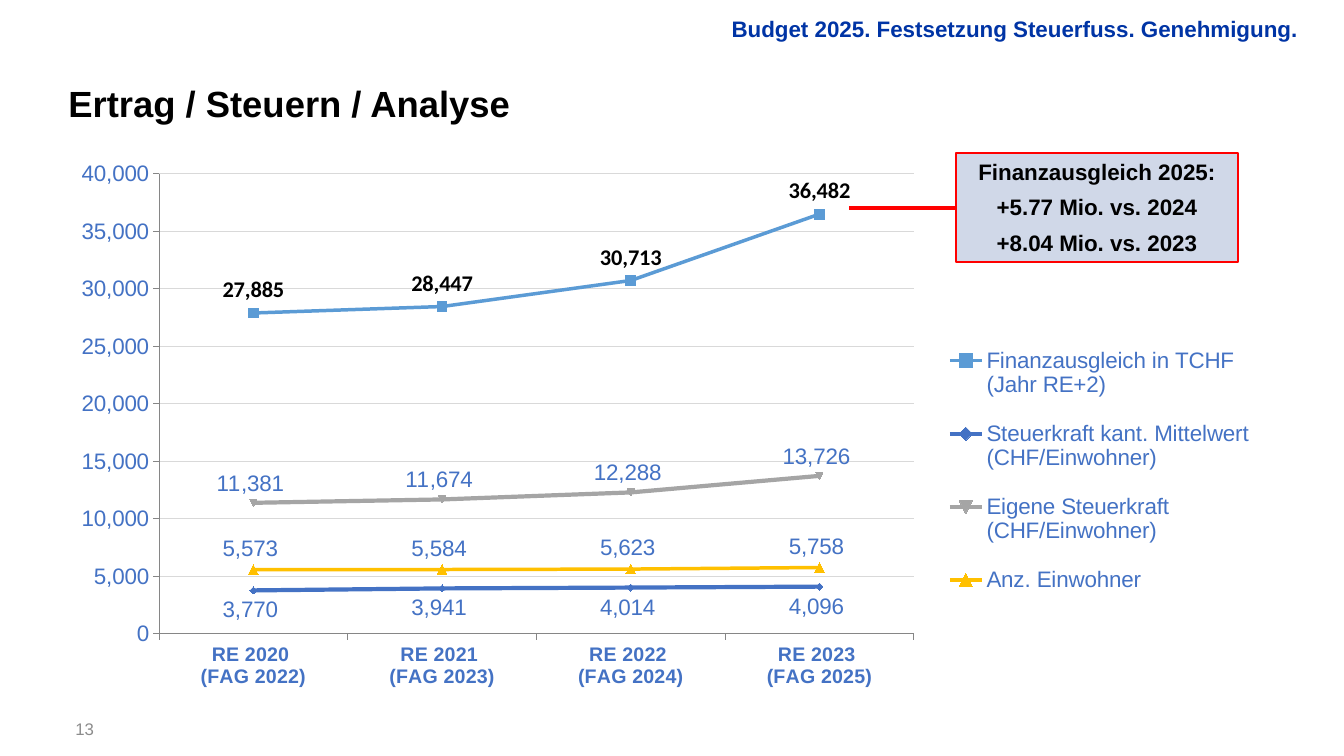
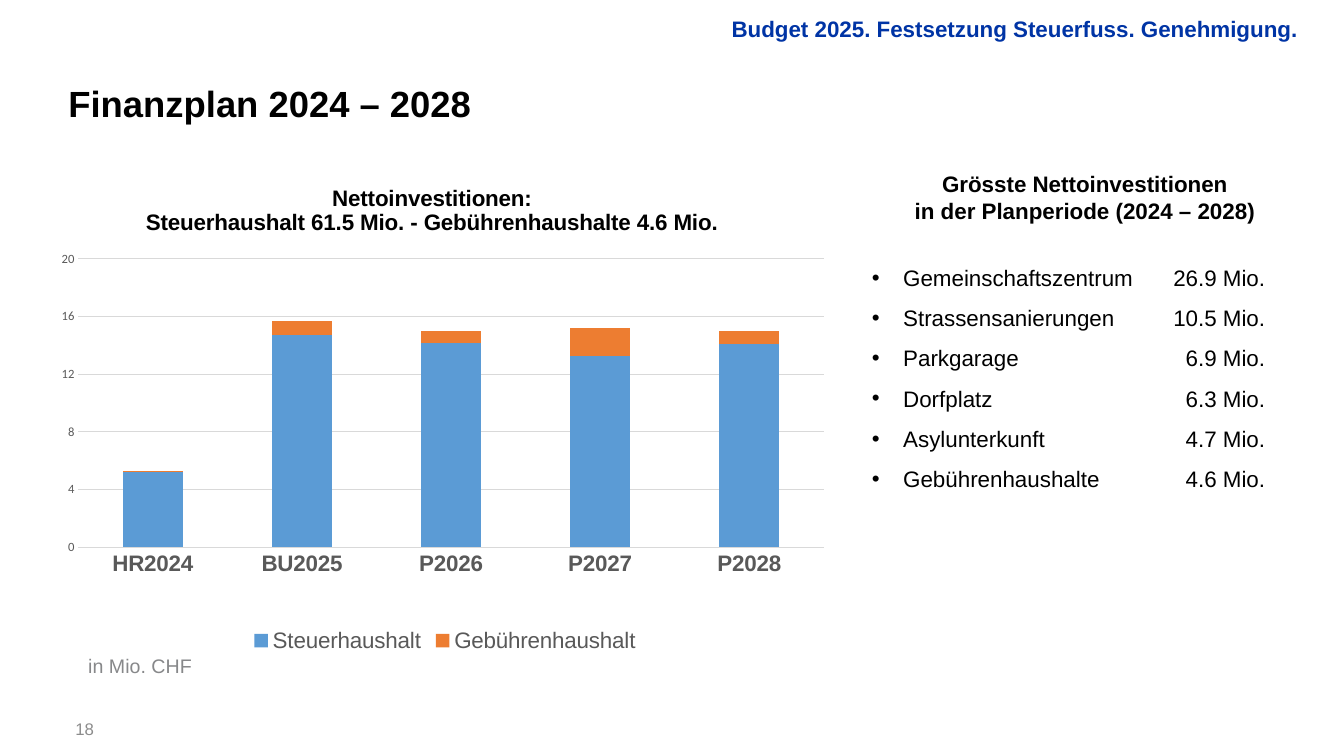
"""Build two budget slides: a tax revenue line chart and an investment plan."""
from lxml.etree import SubElement
from pptx import Presentation
from pptx.chart.data import CategoryChartData
from pptx.dml.color import RGBColor
from pptx.enum.chart import XL_CHART_TYPE, XL_LABEL_POSITION, XL_LEGEND_POSITION, XL_TICK_MARK
from pptx.enum.shapes import MSO_CONNECTOR, MSO_SHAPE
from pptx.enum.text import MSO_ANCHOR, PP_ALIGN
from pptx.oxml import parse_xml
from pptx.oxml.ns import nsdecls, qn
from pptx.util import Inches, Pt

HUES = {
    "ink": "000000", "navy": "0034A5", "foot": "8C8C8C", "note": "87888A",
    "text": "4472C4", "dark": "595959", "grid": "D9D9D9", "axis": "868686",
    "sky": "5B9BD5", "blue": "4472C4", "gray": "A5A5A5", "gold": "FFC000",
    "rust": "ED7D31", "red": "FF0000", "pale": "D0D8E8",
}
RGB = {name: RGBColor.from_string(hue) for name, hue in HUES.items()}
LEFT, RIGHT, MID = PP_ALIGN.LEFT, PP_ALIGN.RIGHT, PP_ALIGN.CENTER


def style(font, size, hue, bold=False, name="Arial"):
    for key, val in {"size": Pt(size), "bold": bold, "name": name}.items():
        setattr(font, key, val)
    font.color.rgb = RGB[hue]


def place(node, spot, box, inner=False):
    for old in node.findall(qn("c:layout")):
        node.remove(old)
    layout = parse_xml(f"<c:layout {nsdecls('c')}><c:manualLayout/></c:layout>")
    rules = [("layoutTarget", "inner")] if inner else []
    rules += [("xMode", "edge"), ("yMode", "edge"), *zip("xywh", box)]
    for tag, val in rules:
        SubElement(layout[0], qn(f"c:{tag}")).set("val", str(val))
    node.insert(spot, layout)


deck = Presentation()
deck.slide_width, deck.slide_height = Inches(13.33), Inches(7.5)

HEAD = "Budget 2025. Festsetzung Steuerfuss. Genehmigung."
UNIT = ((0.77, 6.44, 1.24, 0.34), "in Mio. CHF", MID, MSO_ANCHOR.TOP, 14, "note", False)
PAGES = [("Ertrag / Steuern / Analyse", "13", []), ("Finanzplan 2024 – 2028", "18", [UNIT])]
slides = []
for title, num, extra in PAGES:
    slide = deck.slides.add_slide(deck.slide_layouts[6])
    slides.append(slide)
    for box, text, align, anchor, size, hue, bold in [
        ((0.58, 7.11, 0.52, 0.24), num, MID, MSO_ANCHOR.MIDDLE, 12, "foot", False),
        ((0.58, 0.35, 12.39, 0.94), title, LEFT, MSO_ANCHOR.BOTTOM, 26, "ink", True),
        ((0.58, 0.1, 12.39, 0.35), HEAD, RIGHT, MSO_ANCHOR.TOP, 16, "navy", True),
        *extra,
    ]:
        frame = slide.shapes.add_textbox(*map(Inches, box)).text_frame
        frame.word_wrap, frame.vertical_anchor = True, anchor
        para = frame.paragraphs[0]
        para.alignment = align
        run = para.add_run()
        run.text = text
        style(run.font, size, hue, bold)
tax, plan = slides

CHARTS = [
    {
        "slide": tax, "kind": XL_CHART_TYPE.LINE_MARKERS, "box": (0.2, 1.54, 12.52, 5.39),
        "cats": [f"RE {year} \n(FAG {year + 2})" for year in range(2020, 2024)],
        "rows": [
            ("Finanzausgleich in TCHF (Jahr RE+2)", (27885, 28447, 30713, 36482), "sky"),
            ("Steuerkraft kant. Mittelwert (CHF/Einwohner)", (3770, 3941, 4014, 4096), "blue"),
            ("Eigene Steuerkraft (CHF/Einwohner)", (11381, 11674, 12288, 13726), "gray"),
            ("Anz. Einwohner", (5573, 5584, 5623, 5758), "gold"),
        ],
        "plot": (0.11, 0.034, 0.598, 0.847), "top": 40000, "step": 5000,
        "tick": XL_TICK_MARK.OUTSIDE, "line": "axis", "key": XL_LEGEND_POSITION.RIGHT,
        "hue": "text", "cat": 14, "val": (16, "text"),
    },
    {
        "slide": plan, "kind": XL_CHART_TYPE.COLUMN_STACKED, "box": (0.47, 1.55, 7.89, 4.97),
        "cats": ["HR2024", "BU2025", "P2026", "P2027", "P2028"],
        "rows": [
            ("Steuerhaushalt", (5.2, 14.7, 14.2, 13.3, 14.1), "sky"),
            ("Gebührenhaushalt", (0.1, 1, 0.8, 1.9, 0.9), "rust"),
        ],
        "plot": (0.039, 0.205, 0.937, 0.576), "top": 20, "step": 4,
        "tick": XL_TICK_MARK.NONE, "line": None, "key": XL_LEGEND_POSITION.BOTTOM,
        "hue": "dark", "cat": 16, "val": (9, "dark", False, "Calibri"),
    },
]
charts = []
for item in CHARTS:
    data = CategoryChartData(number_format="General")
    data.categories = item["cats"]
    for name, vals, hue in item["rows"]:
        data.add_series(name, vals)
    shape = item["slide"].shapes.add_chart(item["kind"], *map(Inches, item["box"]), data)
    chart = shape.chart
    charts.append(chart)
    style(chart.font, 10, "ink", name="Calibri")
    chart.has_title = False
    chart.has_legend = True
    chart.legend.position = item["key"]
    chart.legend.include_in_layout = False
    style(chart.legend.font, 16, item["hue"])
    chart.plots[0].vary_by_categories = False
    place(chart._chartSpace.chart.plotArea, 0, item["plot"], True)
    cat, val = chart.category_axis, chart.value_axis
    for axis in (cat, val):
        axis.major_tick_mark, axis.minor_tick_mark = item["tick"], XL_TICK_MARK.NONE
        if item["line"]:
            axis.format.line.color.rgb = RGB[item["line"]]
        else:
            axis.format.line.fill.background()
    style(cat.tick_labels.font, item["cat"], item["hue"], True)
    style(val.tick_labels.font, *item["val"])
    val.tick_labels.number_format = "#,##0"
    val.tick_labels.number_format_is_linked = False
    val.minimum_scale, val.maximum_scale, val.major_unit = 0, item["top"], item["step"]
    val.has_major_gridlines = True
    grid = val.major_gridlines.format.line
    grid.color.rgb, grid.width = RGB["grid"], Pt(0.75)

trend, bars = charts
place(trend.legend._element, 1, (0.73, 0.31, 0.25, 0.54))
PADDED = "#,##0_ ;\\-#,##0\\ "
ABOVE, BELOW = XL_LABEL_POSITION.ABOVE, XL_LABEL_POSITION.BELOW
LOOKS = [
    (2.5, 7, ABOVE, "#,##0", ("ink", True, "Calibri")),
    (3, 5, BELOW, PADDED, ("text",)),
    (3, 5, ABOVE, PADDED, ("text",)),
    (2.5, 7, ABOVE, PADDED, ("text",)),
]
for row, (_, _, hue), (width, dot, spot, form, look) in zip(
    trend.plots[0].series, CHARTS[0]["rows"], LOOKS
):
    row.smooth = False
    row.format.line.color.rgb, row.format.line.width = RGB[hue], Pt(width)
    row.marker.size = dot
    row.marker.format.fill.solid()
    row.marker.format.fill.fore_color.rgb = RGB[hue]
    row.marker.format.line.color.rgb = RGB[hue]
    tags = row.data_labels
    tags.show_value, tags.position = True, spot
    tags.number_format, tags.number_format_is_linked = form, False
    style(tags.font, 16, *look)

call = tax.shapes.add_shape(MSO_SHAPE.RECTANGLE, *map(Inches, (9.48, 1.52, 2.8, 1.08)))
call.shadow.inherit = False
call.fill.solid()
call.fill.fore_color.rgb = RGB["pale"]
call.line.color.rgb, call.line.width = RGB["red"], Pt(1.5)
frame = call.text_frame
frame.vertical_anchor = MSO_ANCHOR.TOP
frame.text = "Finanzausgleich 2025:\n+5.77 Mio. vs. 2024\n+8.04 Mio. vs. 2023"
for para in frame.paragraphs:
    para.alignment, para.space_after = MID, Pt(6)
    style(para.runs[0].font, 16, "ink", True)

ends = map(Inches, (9.48, 2.06, 8.42, 2.06))
link = tax.shapes.add_connector(MSO_CONNECTOR.STRAIGHT, *ends)
link.begin_connect(call, 1)
link.line.color.rgb, link.line.width = RGB["red"], Pt(3)
SubElement(link._element.spPr, qn("a:effectLst"))

bars.plots[0].gap_width, bars.plots[0].overlap = 150, 100
for row, (_, _, hue) in zip(bars.plots[0].series, CHARTS[1]["rows"]):
    row.format.fill.solid()
    row.format.fill.fore_color.rgb = RGB[hue]
frame = bars.chart_title.text_frame
frame.text = "Nettoinvestitionen:\nSteuerhaushalt 61.5 Mio. - Gebührenhaushalte 4.6 Mio."
for para in frame.paragraphs:
    style(para.runs[0].font, 16, "ink", True)
place(bars.chart_title._element, 1, (0.12, 0.05))

HEADS = ["Grösste Nettoinvestitionen", "in der Planperiode (2024 – 2028)"]
COSTS = [
    ("Gemeinschaftszentrum", 26.9), ("Strassensanierungen", 10.5), ("Parkgarage", 6.9),
    ("Dorfplatz", 6.3), ("Asylunterkunft", 4.7), ("Gebührenhaushalte", 4.6),
]
frame = plan.shapes.add_textbox(*map(Inches, (8.55, 1.64, 4.42, 4.54))).text_frame
frame.word_wrap = True
frame.text = "\n".join(HEADS + [f"{name}\t{cost} Mio." for name, cost in COSTS])
for spot, para in enumerate(frame.paragraphs):
    head = spot < len(HEADS)
    style(para.runs[0].font, 16, "ink", head)
    if head:
        para.alignment = MID
        continue
    para.line_spacing = 1.5
    props = para._p.get_or_add_pPr()
    props.set("marL", str(Inches(0.31)))
    props.set("indent", str(-Inches(0.31)))
    SubElement(props, qn("a:buFont")).set("typeface", "Arial")
    SubElement(props, qn("a:buChar")).set("char", "•")
    stop = SubElement(SubElement(props, qn("a:tabLst")), qn("a:tab"))
    stop.set("pos", str(Inches(3.9)))
    stop.set("algn", "r")
frame.paragraphs[len(HEADS) - 1].space_after = Pt(19)

deck.save("out.pptx")
